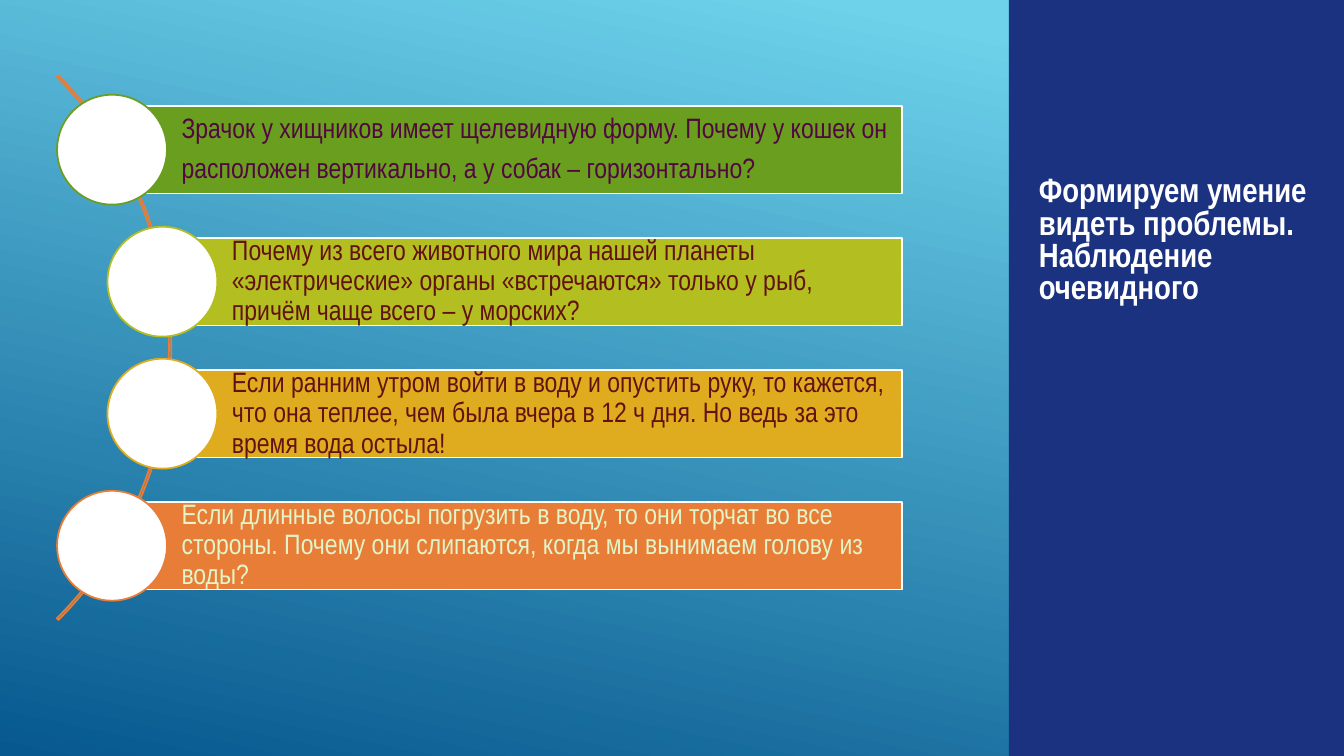
"""Builds a slide with four observation questions along an arc and a side title."""
from pptx import Presentation
from pptx.dml.color import RGBColor
from pptx.enum.shapes import MSO_SHAPE
from pptx.enum.text import MSO_ANCHOR, MSO_AUTO_SIZE, PP_ALIGN
from pptx.util import Pt

RECT, OVAL, ARC = MSO_SHAPE.RECTANGLE, MSO_SHAPE.OVAL, MSO_SHAPE.BLOCK_ARC
MIDDLE, LEFT, GROW = MSO_ANCHOR.MIDDLE, PP_ALIGN.LEFT, MSO_AUTO_SIZE.SHAPE_TO_FIT_TEXT

FONT = "Arial Narrow"
WHITE, NAVY, ORANGE = "FFFFFF", "1B3281", "E87D37"
BACKGROUND = [("6ED2EB", 0.1), ("06588E", 1)]
TITLE = "Формируем умение видеть проблемы. Наблюдение очевидного"
QUESTIONS = [
    (80, "6A9E1F", "520741",
     ["Зрачок у хищников имеет щелевидную форму. Почему у кошек он",
      "расположен вертикально, а у собак – горизонтально?"]),
    (116, "B3BE20", "631212",
     ["Почему из всего животного мира нашей планеты «электрические» органы "
      "«встречаются» только у рыб, причём чаще всего – у морских?"]),
    (116, "DFAC1F", "631212",
     ["Если ранним утром войти в воду и опустить руку, то кажется, что она теплее, "
      "чем была вчера в 12 ч дня. Но ведь за это время вода остыла!"]),
    (80, ORANGE, "E3F4C9",
     ["Если длинные волосы погрузить в воду, то они торчат во все стороны. "
      "Почему они слипаются, когда мы вынимаем голову из воды?"]),
]
BAR_RIGHT, BAR_HEIGHT, CIRCLE, ARC_SIZE = 644.4, 62.7, 78.5, 550
FIRST_MIDDLE, STEP = 106.9, 94.3
ARC_RIGHT = 122.3


def rgb(value):
    return RGBColor.from_string(value)


def add_shape(s, kind, left, top, width, height, fill=None, line=None):
    sp = s.shapes.add_shape(kind, Pt(left), Pt(top), Pt(width), Pt(height))
    sp.shadow.inherit = False
    if fill:
        sp.fill.solid()
        sp.fill.fore_color.rgb = rgb(fill)
    else:
        sp.fill.background()
    if line:
        sp.line.color.rgb = rgb(line)
        sp.line.width = Pt(1.25)
    else:
        sp.line.fill.background()
    return sp


def write(tf, lines, size, color, spacing, after=0, bold=False):
    tf.word_wrap = True
    for i, text in enumerate(lines):
        p = tf.add_paragraph() if i else tf.paragraphs[0]
        p.text = text
        p.alignment = LEFT
        p.line_spacing = spacing
        p.space_after = Pt(after)
        p.font.name = FONT
        p.font.size = Pt(size)
        p.font.bold = bold
        p.font.color.rgb = rgb(color)


def add_question(s, middle, left, color, text_color, lines):
    bar = add_shape(s, RECT, left, middle - BAR_HEIGHT / 2, BAR_RIGHT - left,
                    BAR_HEIGHT, color, WHITE)
    tf = bar.text_frame
    tf.vertical_anchor = MIDDLE
    tf.margin_left = Pt(49.7)
    tf.margin_right = tf.margin_top = tf.margin_bottom = Pt(4)
    write(tf, lines, 20, text_color, 0.9, after=7)
    add_shape(s, OVAL, left - CIRCLE / 2, middle - CIRCLE / 2, CIRCLE, CIRCLE,
              WHITE, color)


def main():
    prs = Presentation()
    prs.slide_width, prs.slide_height = Pt(960), Pt(540)
    s = prs.slides.add_slide(prs.slide_layouts[6])

    fill = s.background.fill
    fill.gradient()
    fill.gradient_angle = 258
    for stop, (color, position) in zip(fill.gradient_stops, BACKGROUND):
        stop.color.rgb = rgb(color)
        stop.position = position

    add_shape(s, RECT, 720.7, 0, 239.3, 540, NAVY)
    title = s.shapes.add_textbox(Pt(735), Pt(123), Pt(226), Pt(100))
    write(title.text_frame, [TITLE], 24, WHITE, 0.8, bold=True)
    title.text_frame.auto_size = GROW

    arc_middle = FIRST_MIDDLE + STEP * (len(QUESTIONS) - 1) / 2
    arc = add_shape(s, ARC, ARC_RIGHT - ARC_SIZE, arc_middle - ARC_SIZE / 2,
                    ARC_SIZE, ARC_SIZE, line=ORANGE)
    for i, value in enumerate((189, 27, 0.003)):
        arc.adjustments[i] = value

    for i, question in enumerate(QUESTIONS):
        add_question(s, FIRST_MIDDLE + i * STEP, *question)

    prs.save("out.pptx")


if __name__ == "__main__":
    main()
